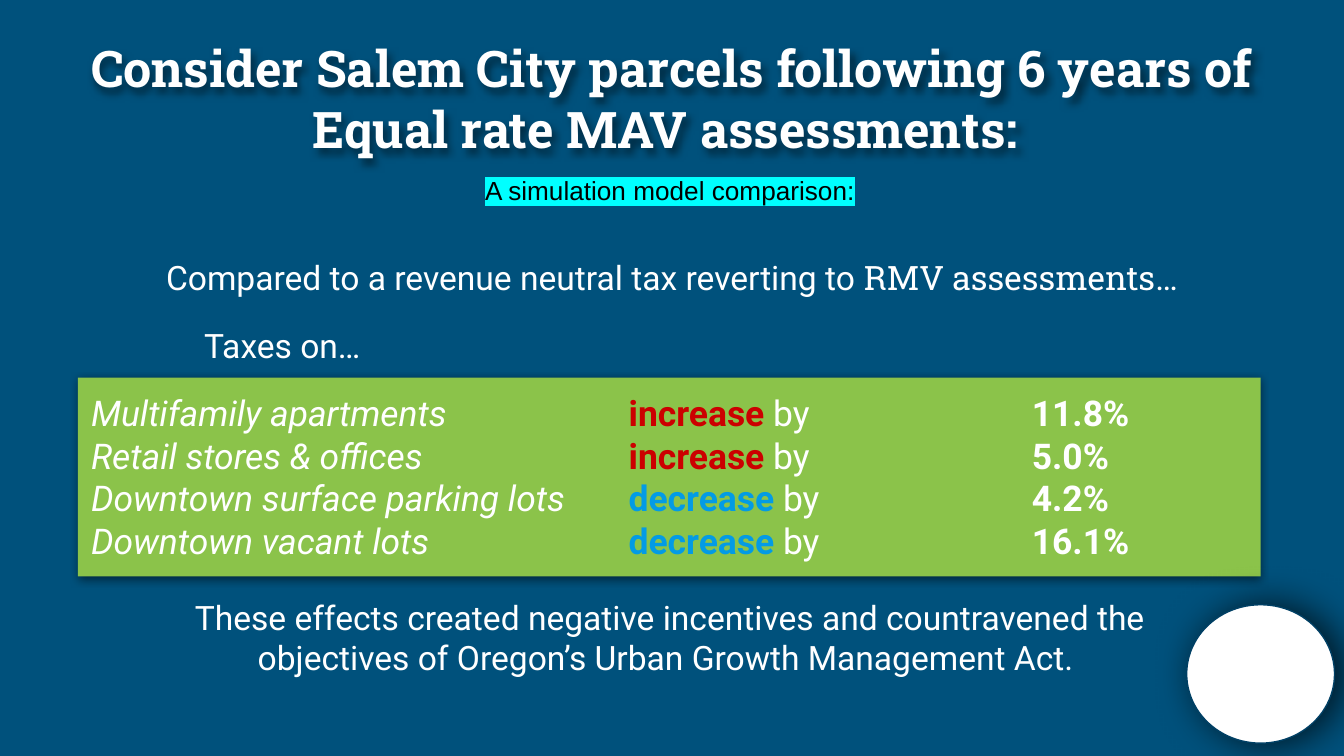
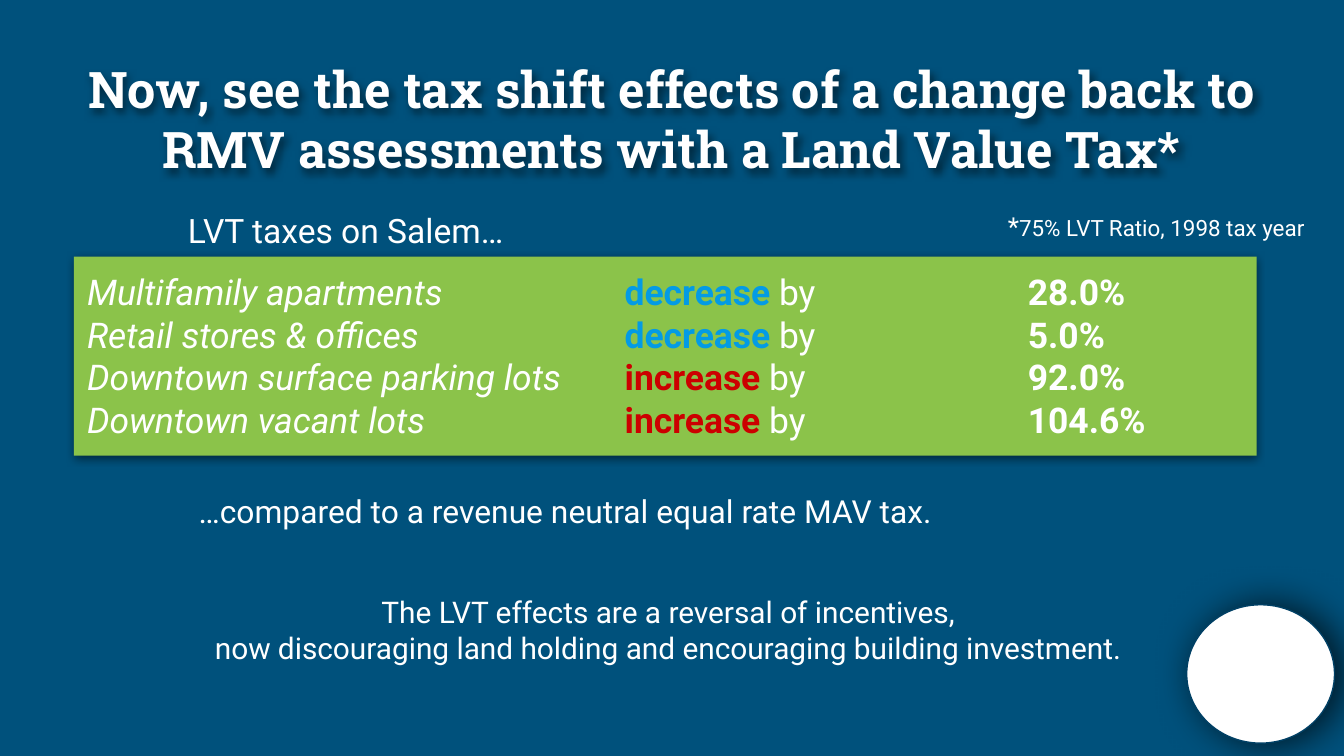
from dataclasses import dataclass

from lxml import etree
from pptx import Presentation
from pptx.dml.color import RGBColor
from pptx.enum.shapes import MSO_SHAPE
from pptx.enum.text import MSO_ANCHOR, MSO_AUTO_SIZE, PP_ALIGN
from pptx.oxml.ns import qn
from pptx.util import Inches, Pt

RECTANGLE, OVAL = MSO_SHAPE.RECTANGLE, MSO_SHAPE.OVAL
LEFT, CENTER = PP_ALIGN.LEFT, PP_ALIGN.CENTER
TOP, BOTTOM = MSO_ANCHOR.TOP, MSO_ANCHOR.BOTTOM
NO_FIT, GROW = MSO_AUTO_SIZE.NONE, MSO_AUTO_SIZE.SHAPE_TO_FIT_TEXT
TITLE_ONLY = 5


@dataclass(frozen=True)
class Theme:
    background: str = "00517C"
    panel: str = "8BC34A"
    white: str = "FFFFFF"
    black: str = "000000"
    outline: str = "004065"
    increase: str = "CC0000"
    decrease: str = "039BE5"
    highlight: str = "00FFFF"
    body_font: str = "Roboto"
    title_font: str = "Roboto Slab"
    label_font: str = "Arial"
    title_size: int = 27
    panel_size: int = 19
    body_size: int = 18
    lead_size: int = 17
    closing_size: int = 16
    label_size: int = 14
    note_size: int = 12


THEME = Theme()
PROPERTIES = ["Multifamily apartments", "Retail stores & offices",
              "Downtown surface parking lots", "Downtown vacant lots"]
TAB_STOPS = [4, 7]


class Deck:
    def __init__(self, theme):
        self.theme = theme
        self.prs = Presentation()
        self.prs.slide_width = Inches(10)
        self.prs.slide_height = Inches(10) * 9 // 16
        fill = self.prs.slide_master.background.fill
        fill.solid()
        fill.fore_color.rgb = RGBColor.from_string(theme.background)
        self.s = None

    def new_slide(self):
        self.s = self.prs.slides.add_slide(self.prs.slide_layouts[TITLE_ONLY])

    def run(self, p, text, size, font=None, color=None, bold=False, italic=False):
        r = p.add_run()
        r.text = text
        r.font.size = Pt(size)
        r.font.name = font or self.theme.body_font
        r.font.bold, r.font.italic = bold, italic
        r.font.color.rgb = RGBColor.from_string(color or self.theme.white)
        return r

    def frame(self, sp, inset=0.1, anchor=TOP, fit=GROW):
        """Set up the text frame of a shape; inset applies to top and bottom."""
        tf = sp.text_frame
        tf.word_wrap, tf.auto_size, tf.vertical_anchor = True, fit, anchor
        tf.margin_left = tf.margin_right = Inches(0.1)
        tf.margin_top = tf.margin_bottom = Inches(inset)
        return tf

    def shadow(self, sp, alpha, blur, distance, angle):
        """Give a shape a shadow; blur and distance in points, alpha in percent."""
        sp.shadow.inherit = False
        effects = sp._element.spPr.find(qn("a:effectLst"))
        outer = etree.SubElement(
            effects, qn("a:outerShdw"), blurRad=str(Pt(blur)),
            dist=str(Pt(distance)), dir=str(angle * 60000), algn="bl",
            rotWithShape="0")
        clr = etree.SubElement(outer, qn("a:srgbClr"), val=self.theme.black)
        etree.SubElement(clr, qn("a:alpha"), val=str(alpha * 1000))

    def title(self, text, top):
        t = self.theme
        sp = self.s.shapes.title
        sp.left, sp.top, sp.width, sp.height = map(Inches, (0.42, top, 9.15, 1.07))
        sp.fill.background()
        self.shadow(sp, 50, 4.5, 3, 60)
        p = self.frame(sp, anchor=BOTTOM, fit=NO_FIT).paragraphs[0]
        p.alignment = CENTER
        self.run(p, text, t.title_size, t.title_font, bold=True)

    def text_box(self, box, align=LEFT, inset=0.1):
        """Add a text box and return its first paragraph and its frame."""
        tf = self.frame(self.s.shapes.add_textbox(*map(Inches, box)), inset)
        tf.paragraphs[0].alignment = align
        return tf.paragraphs[0], tf

    def text(self, box, text, size, align=LEFT):
        p, _ = self.text_box(box, align)
        self.run(p, text, size)
        return p

    def heading(self, box, text):
        p = self.text(box, text, self.theme.body_size)
        p.line_spacing, p.space_after = 1.15, Pt(12)

    def label(self, box, text):
        t = self.theme
        p, _ = self.text_box(box, CENTER, 0.05)
        r = self.run(p, text, t.label_size, t.label_font, t.black)
        mark = etree.Element(qn("a:highlight"))
        etree.SubElement(mark, qn("a:srgbClr"), val=t.highlight)
        r.font._element.find(qn("a:solidFill")).addnext(mark)

    def shape(self, kind, box, color, outline=None):
        sp = self.s.shapes.add_shape(kind, *map(Inches, box))
        sp.fill.solid()
        sp.fill.fore_color.rgb = RGBColor.from_string(color)
        if outline:
            sp.line.color.rgb = RGBColor.from_string(outline)
            sp.line.width = Pt(0.75)
        else:
            sp.line.fill.background()
        return sp

    def tax_panel(self, left, top, changes):
        """Green panel with one tabbed line for each kind of property."""
        t = self.theme
        sp = self.shape(RECTANGLE, (left, top, 8.8, 1.48), t.panel)
        self.shadow(sp, 50, 4.5, 1.5, 90)
        tf = self.frame(sp)
        for i, (name, (change, percent)) in enumerate(zip(PROPERTIES, changes)):
            p = tf.add_paragraph() if i else tf.paragraphs[0]
            p.alignment = LEFT
            tabs = etree.SubElement(p._p.get_or_add_pPr(), qn("a:tabLst"))
            for stop in TAB_STOPS:
                etree.SubElement(tabs, qn("a:tab"), pos=str(Inches(stop)), algn="l")
            self.run(p, name + "\t", t.panel_size, italic=True)
            self.run(p, change, t.panel_size, color=getattr(t, change), bold=True)
            self.run(p, " by\t", t.panel_size)
            self.run(p, percent, t.panel_size, bold=True)

    def badge(self):
        t = self.theme
        sp = self.shape(OVAL, (8.83, 4.5, 1.1, 1.03), t.white, t.outline)
        self.shadow(sp, 75, 21.4, 4.5, 0)


def mav_slide(deck):
    t = deck.theme
    deck.new_slide()
    deck.title("Consider Salem City parcels following 6 years of "
               "Equal rate MAV assessments: ", 0.21)
    deck.heading((1.42, 2.27, 1.81, 0.72), "Taxes on…")
    deck.tax_panel(0.58, 2.81, [("increase", "11.8%"), ("increase", "5.0%"),
                                ("decrease", "4.2%"), ("decrease", "16.1%")])
    deck.text((0.94, 4.34, 8.09, 0.81),
              "These effects created negative incentives and countravened the "
              "objectives of Oregon’s Urban Growth Management Act. ",
              t.body_size, CENTER)
    deck.badge()
    deck.label((3.33, 1.25, 3.31, 0.34), "A simulation model comparison:")
    p, _ = deck.text_box((0.66, 1.86, 8.68, 0.64), CENTER, 0.05)
    deck.run(p, "Compared to a revenue neutral tax reverting to ", t.body_size)
    deck.run(p, "RMV assessments", t.body_size, t.title_font)
    deck.run(p, "…", t.body_size)


def lvt_slide(deck):
    t = deck.theme
    deck.new_slide()
    deck.title("Now, see the tax shift effects of a change back to "
               "RMV assessments with a Land Value Tax*", 0.36)
    deck.heading((1.3, 1.42, 3.57, 0.72), "LVT taxes on Salem…")
    deck.tax_panel(0.55, 1.91, [("decrease", "28.0%"), ("decrease", "5.0%"),
                                ("increase", "92.0%"), ("increase", "104.6%")])
    p, tf = deck.text_box((1.38, 3.56, 7.24, 1.97))
    deck.run(p, "…compared to a revenue neutral equal rate MAV tax.", t.lead_size)
    p = tf.add_paragraph()
    p.alignment, p.space_before = CENTER, Pt(34)
    deck.run(p, "The LVT effects are a reversal of incentives, ", t.closing_size)
    p.add_line_break()
    deck.run(p, "now discouraging land holding and encouraging building investment. ",
             t.closing_size)
    deck.badge()
    p, _ = deck.text_box((7.4, 1.52, 2.45, 0.34), inset=0.05)
    deck.run(p, "*", t.label_size)
    deck.run(p, "75% LVT Ratio, 1998 tax year", t.note_size)


def main():
    deck = Deck(THEME)
    mav_slide(deck)
    lvt_slide(deck)
    deck.prs.save("out.pptx")


if __name__ == "__main__":
    main()
